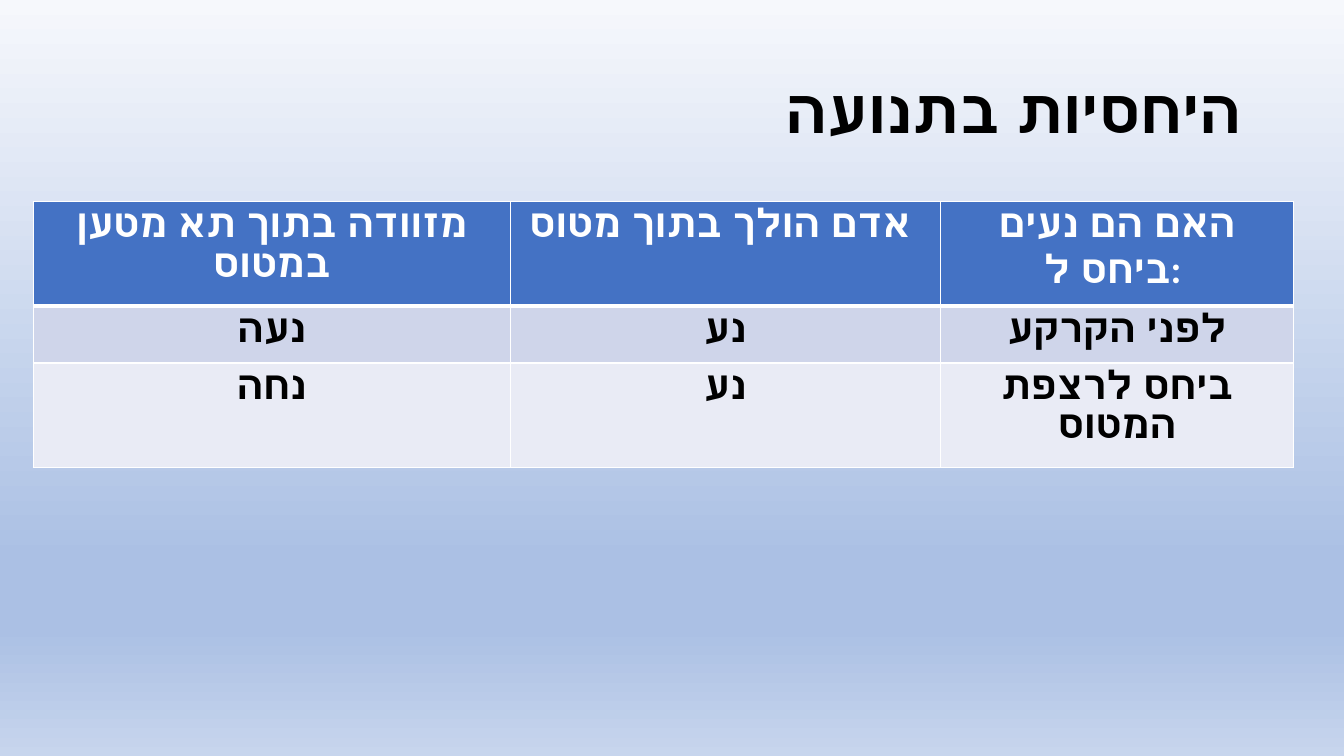
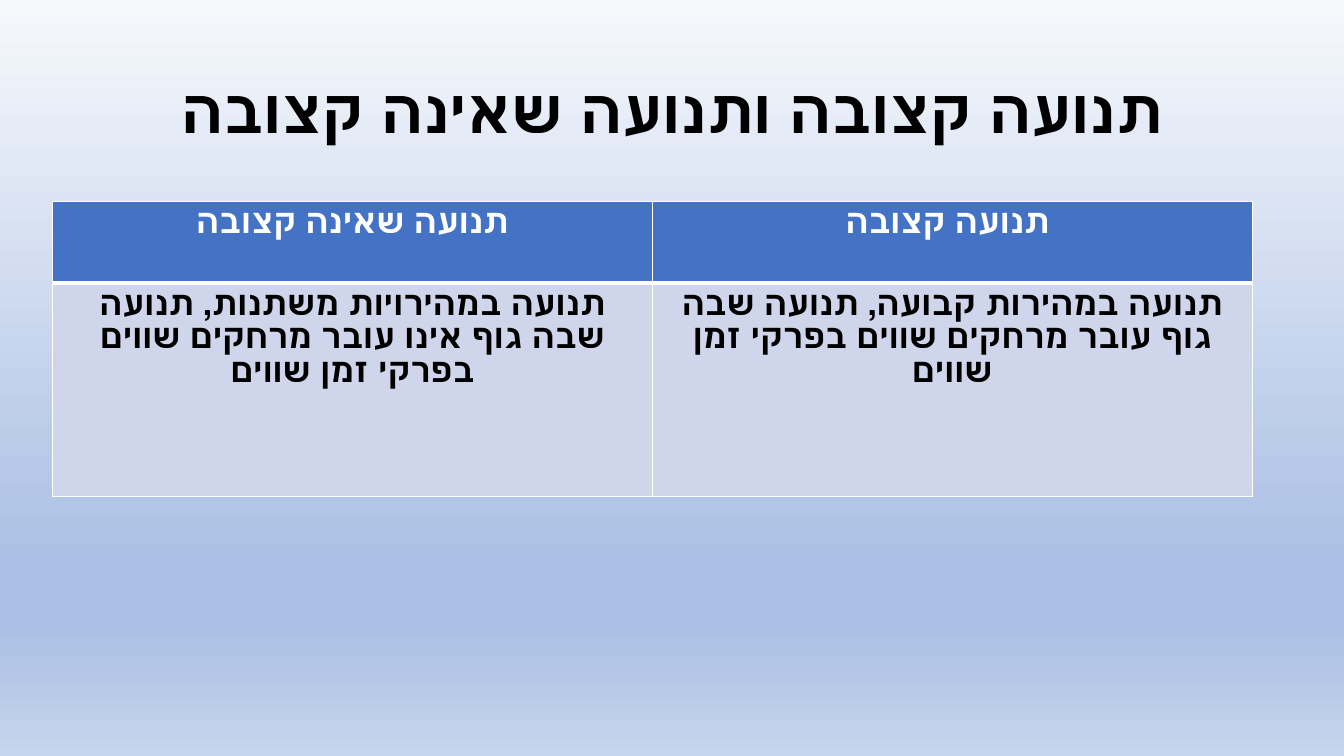
from lxml.etree import SubElement
from pptx import Presentation
from pptx.dml.color import RGBColor
from pptx.enum.lang import MSO_LANGUAGE_ID as Lang
from pptx.enum.text import MSO_ANCHOR as Anchor, PP_ALIGN as Align
from pptx.oxml.ns import qn
from pptx.util import Inches, Pt

COLORS = {
    "header": "4472C4",
    "band_dark": "CFD5EA",
    "band_light": "E9EBF5",
    "border": "FFFFFF",
    "header_text": "FFFFFF",
    "text": "000000",
}
BACKGROUND = [(0, "F6F8FC"), (74, "ABC0E4"), (83, "ABC0E4"), (100, "C7D5ED")]
TITLE_BOX = (0.92, 0.4, 11.5, 1.45)
TABLE_TOP = 2

SLIDES = [
    {
        "title": "היחסיות בתנועה",
        "title_font": "Calibri",
        "title_align": Align.RIGHT,
        "left": 0.33,
        "columns": [4.73, 4.27, 3.5],
        "row_heights": [0.96, 0.48, 0.87],
        "size": 28,
        "rows": [
            ["מזוודה בתוך תא מטען במטוס", "אדם הולך בתוך מטוס ", "האם הם נעים ביחס ל: "],
            ["נעה", "נע", "לפני הקרקע"],
            ["נחה", "נע", "ביחס לרצפת המטוס"],
        ],
    },
    {
        "title": "תנועה קצובה ותנועה שאינה קצובה",
        "title_font": "Arial",
        "title_align": Align.CENTER,
        "left": 0.52,
        "columns": [5.95, 5.95],
        "row_heights": [0.81, 2.12],
        "size": 24,
        "rows": [
            ["תנועה שאינה קצובה", "תנועה קצובה "],
            [
                "תנועה במהירויות משתנות, תנועה שבה גוף אינו עובר מרחקים שווים בפרקי זמן שווים",
                "תנועה במהירות קבועה, תנועה שבה גוף עובר מרחקים שווים בפרקי זמן שווים",
            ],
        ],
    },
]


def paint_background(master):
    fill = master.background.fill
    fill.gradient()
    fill.gradient_angle = 270
    stops = master.element.find(".//" + qn("a:gsLst"))
    for stop in list(stops):
        stops.remove(stop)
    for percent, color in BACKGROUND:
        stop = SubElement(stops, qn("a:gs"), pos=str(percent * 1000))
        SubElement(stop, qn("a:srgbClr"), val=color)


def write(frame, text, font, size, color, align):
    paragraph = frame.paragraphs[0]
    paragraph.alignment = align
    run = paragraph.add_run()
    run.text = text
    run.font.name = font
    run.font.size = Pt(size)
    run.font.bold = True
    run.font.language_id = Lang.HEBREW
    run.font.color.rgb = RGBColor.from_string(color)
    return paragraph


def set_borders(cell, widths):
    properties = cell._tc.get_or_add_tcPr()
    for position, (side, width) in enumerate(widths.items()):
        line = SubElement(properties, qn(f"a:ln{side}"), w=str(Pt(width)))
        fill = SubElement(line, qn("a:solidFill"))
        SubElement(fill, qn("a:srgbClr"), val=COLORS["border"])
        properties.insert(position, line)


def add_title(slide, content):
    box = slide.shapes.add_textbox(*map(Inches, TITLE_BOX))
    frame = box.text_frame
    frame.word_wrap = True
    frame.vertical_anchor = Anchor.MIDDLE
    paragraph = write(frame, content["title"], content["title_font"], 44,
                      COLORS["text"], content["title_align"])
    paragraph.line_spacing = 0.9


def add_comparison(slide, content):
    rows, columns, heights = content["rows"], content["columns"], content["row_heights"]
    table = slide.shapes.add_table(
        len(rows), len(columns), Inches(content["left"]), Inches(TABLE_TOP),
        Inches(sum(columns)), Inches(sum(heights))).table
    for column, width in zip(table.columns, columns):
        column.width = Inches(width)
    for r, (texts, height) in enumerate(zip(rows, heights)):
        table.rows[r].height = Inches(height)
        is_header = r == 0
        band = "header" if is_header else "band_dark" if r % 2 else "band_light"
        text_color = COLORS["header_text" if is_header else "text"]
        borders = {"L": 1, "R": 1, "T": 3 if r == 1 else 1, "B": 3 if is_header else 1}
        for c, text in enumerate(texts):
            cell = table.cell(r, c)
            cell.fill.solid()
            cell.fill.fore_color.rgb = RGBColor.from_string(COLORS[band])
            set_borders(cell, borders)
            write(cell.text_frame, text, "Calibri", content["size"], text_color, Align.CENTER)


def main():
    deck = Presentation()
    deck.slide_width, deck.slide_height = Inches(13.33), Inches(7.5)
    paint_background(deck.slide_master)
    for content in SLIDES:
        slide = deck.slides.add_slide(deck.slide_layouts[6])
        add_title(slide, content)
        add_comparison(slide, content)
    deck.save("out.pptx")


if __name__ == "__main__":
    main()
